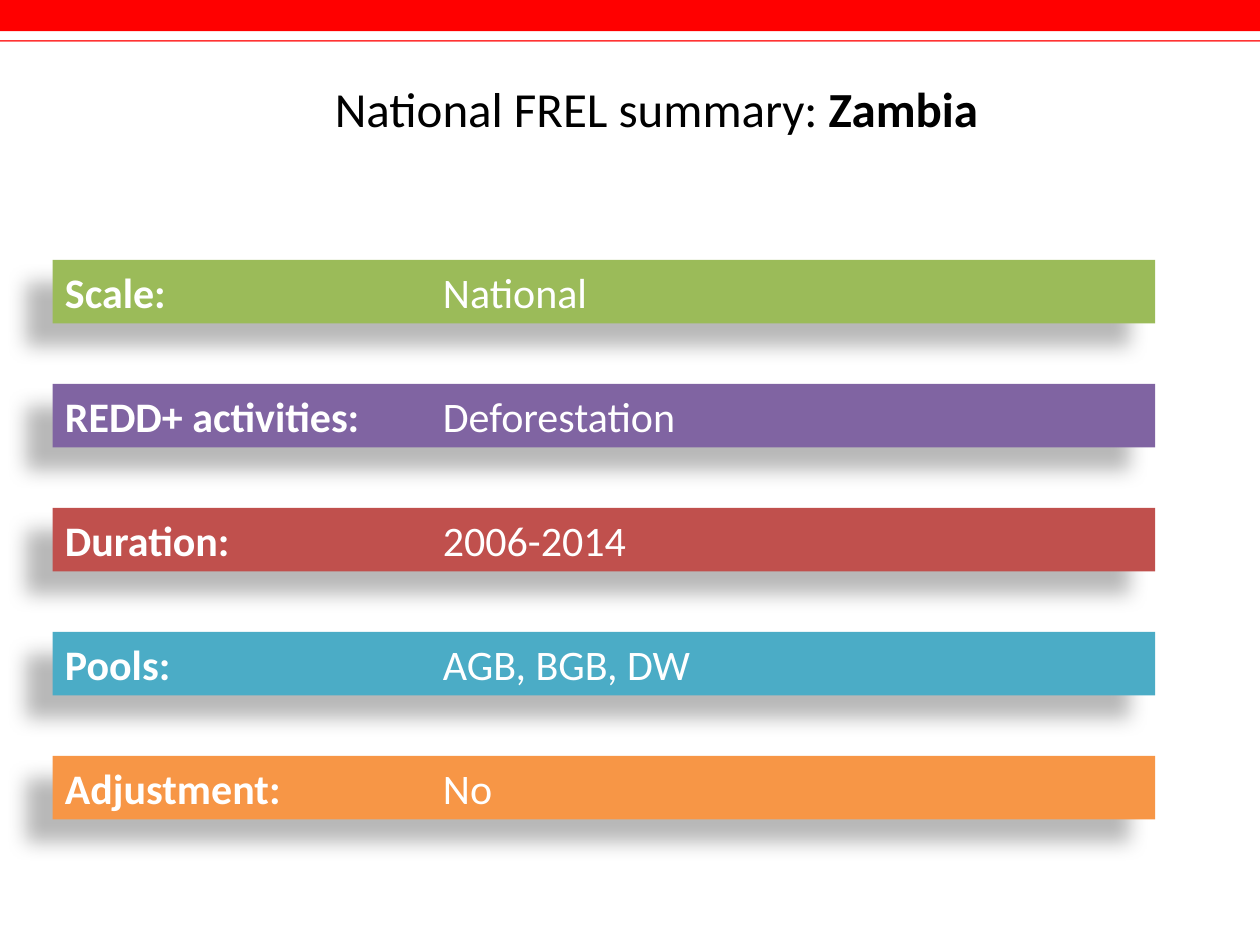
"""Build the national FREL summary slide for Zambia."""
from lxml import etree
from pptx import Presentation, util as u
from pptx.dml import color
from pptx.enum import shapes, text
from pptx.oxml import ns

COLOURS = {
    "banner": "FF0000", "rule": "FF3333", "title": "000000", "label": "FFFFFF", "shadow": "000000",
    "green": "9BBB59", "purple": "8064A2", "red": "C0504D", "blue": "4BACC6", "orange": "F79646",
}
ROWS = [
    ("Scale:", "National", "green"),
    ("REDD+ activities:", "Deforestation", "purple"),
    ("Duration:", "2006-2014", "red"),
    ("Pools:", "AGB, BGB, DW", "blue"),
    ("Adjustment:", "No", "orange"),
]
SHADOW = {"blurRad": u.Pt(11.8), "dist": u.Pt(19.7), "dir": 141 * 60000, "algn": "tl", "rotWithShape": 0}


def add_bar(left, top, width, height, colour):
    shape = slide.shapes.add_shape(
        shapes.MSO_SHAPE.RECTANGLE, u.Cm(left), u.Cm(top), u.Cm(width), u.Cm(height))
    shape.shadow.inherit = False
    shape.fill.solid()
    shape.fill.fore_color.rgb = color.RGBColor.from_string(COLOURS[colour])
    shape.line.fill.background()
    return shape


def add_runs(paragraph, runs, size, colour):
    for words, bold in runs:
        run = paragraph.add_run()
        run.text = words
        for name, value in {"name": "Calibri", "size": u.Pt(size), "bold": bold}.items():
            setattr(run.font, name, value)
        run.font.color.rgb = color.RGBColor.from_string(COLOURS[colour])


presentation = Presentation()
presentation.slide_width, presentation.slide_height = u.Cm(25.4), u.Cm(19.05)
slide = presentation.slides.add_slide(presentation.slide_layouts[6])

add_bar(0, 0, 25.4, 0.63, "banner")
add_bar(0, 0.81, 25.4, 0.03, "rule")

title = slide.shapes.add_textbox(u.Cm(2.54), u.Cm(0.84), u.Cm(21.39), u.Cm(2.67))
title_format = {"word_wrap": True, "vertical_anchor": text.MSO_ANCHOR.MIDDLE}
for name, value in title_format.items():
    setattr(title.text_frame, name, value)
paragraph = title.text_frame.paragraphs[0]
paragraph.alignment = text.PP_ALIGN.CENTER
add_runs(paragraph, [("National FREL summary: ", False), ("Zambia", True)], 28, "title")

for index, (label, answer, colour) in enumerate(ROWS):
    bar = add_bar(1.06, 5.24 + 2.5 * index, 22.23, 1.28, colour)
    effects = bar._element.spPr.find(ns.qn("a:effectLst"))
    shadow = etree.SubElement(
        effects, ns.qn("a:outerShdw"), {key: str(value) for key, value in SHADOW.items()})
    tint = etree.SubElement(shadow, ns.qn("a:srgbClr"), val=COLOURS["shadow"])
    etree.SubElement(tint, ns.qn("a:alpha"), val="28000")

    paragraph = bar.text_frame.paragraphs[0]
    paragraph.alignment = text.PP_ALIGN.LEFT
    tabs = etree.SubElement(paragraph._p.get_or_add_pPr(), ns.qn("a:tabLst"))
    etree.SubElement(tabs, ns.qn("a:tab"), pos=str(u.Cm(7.62)), algn="l")
    add_runs(paragraph, [(label + "\t", True), (answer, False)], 24, "label")

presentation.save("out.pptx")
